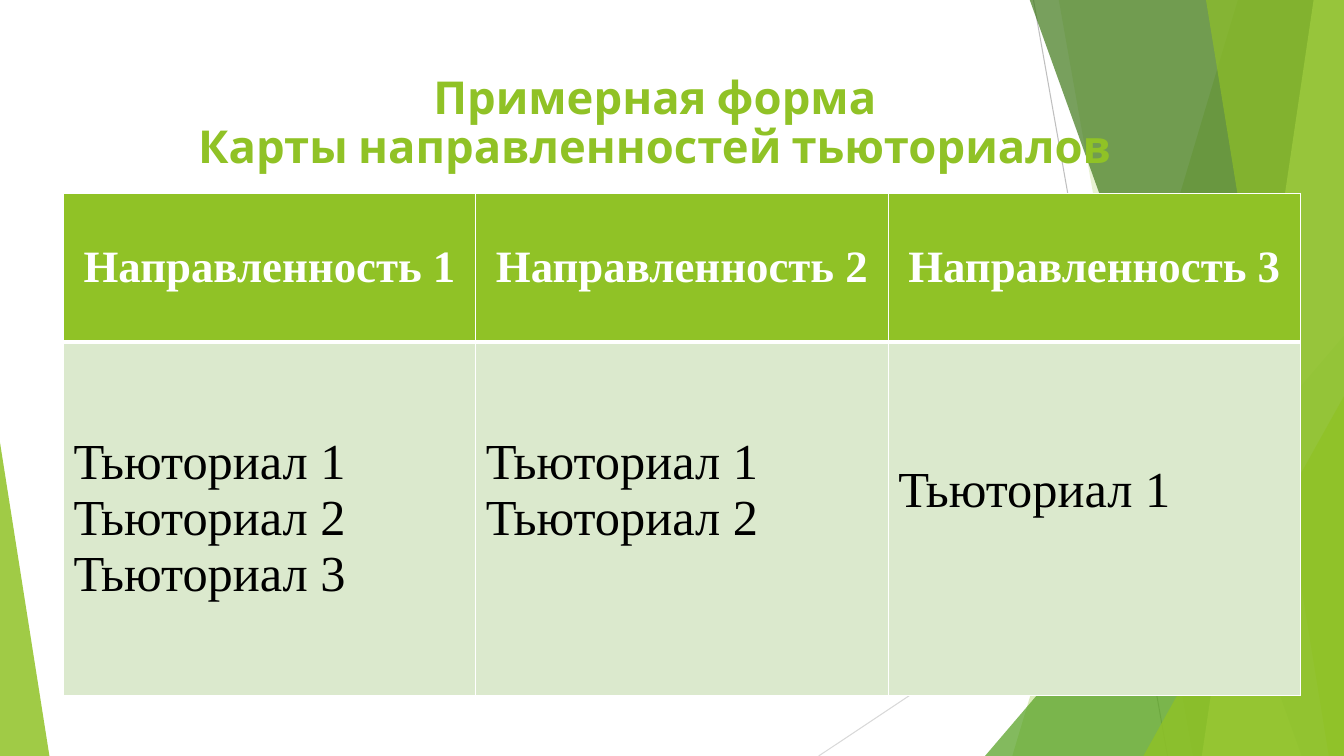
import pptx
import pptx.dml.color
import pptx.enum.shapes
import pptx.enum.text
import pptx.oxml
import pptx.oxml.ns
import pptx.util
from pptx.util import Inches, Pt

RGBColor = pptx.dml.color.RGBColor
GREEN = RGBColor(0x90, 0xC2, 0x26)
MID_GREEN = RGBColor(0x54, 0xA0, 0x21)
DARK_GREEN = RGBColor(0x3F, 0x78, 0x19)
LIME = RGBColor(0xC0, 0xE4, 0x74)
PALE_GREEN = RGBColor(0xDB, 0xE9, 0xCD)
GRAY = RGBColor(0xBF, 0xBF, 0xBF)
LIGHT_GRAY = RGBColor(0xD9, 0xD9, 0xD9)
WHITE = RGBColor(0xFF, 0xFF, 0xFF)
BLACK = RGBColor(0, 0, 0)

WIDTH, HEIGHT, BAND_TOP = 13.33, 7.5, -0.01
TITLE = "Примерная форма\vКарты направленностей тьюториалов"
TABLE_FONT = "Times New Roman"
COLUMNS = [
    ("Направленность 1", ["Тьюториал 1", "Тьюториал 2", "Тьюториал 3"], 0.05),
    ("Направленность 2", ["Тьюториал 1", "Тьюториал 2"], 0.61),
    ("Направленность 3", ["Тьюториал 1"], 0.61),
]
COLUMN_WIDTH = 4.09
ROW_HEIGHTS = [1.47, 3.51]

LINES = [
    ((10.25, 0), (11.58, HEIGHT), GRAY),
    ((WIDTH, 4.03), (8.12, HEIGHT), LIGHT_GRAY),
]
DECORATIONS = [
    ("band", 12.28, 10.04, GREEN, 30),
    ("band", 10.5, 11.83, GREEN, 20),
    ("triangle", (9.77, 3.33, 3.56), 1, MID_GREEN, 72),
    ("band", 10.21, 12.91, DARK_GREEN, 70),
    ("band", 13.03, 11.92, LIME, 70),
    ("band", 11.96, 13.18, GREEN, 65),
    ("triangle", (11.34, 3.93, 1.99), 1, GREEN, 80),
    ("triangle", (0, 4.39, 0.49), 0, GREEN, 85),
]


def paint(shape, color, opacity):
    shape.shadow.inherit = False
    shape.line.fill.background()
    shape.fill.solid()
    shape.fill.fore_color.rgb = color
    color_element = shape.fill._xPr.find(".//" + pptx.oxml.ns.qn("a:srgbClr"))
    alpha = color_element.makeelement(pptx.oxml.ns.qn("a:alpha"), {"val": str(opacity * 1000)})
    color_element.append(alpha)


def add_band(shapes, top_x, bottom_x):
    builder = shapes.build_freeform(Inches(top_x), Inches(BAND_TOP))
    corners = [(WIDTH, BAND_TOP), (WIDTH, HEIGHT), (bottom_x, HEIGHT)]
    builder.add_line_segments([(Inches(x), Inches(y)) for x, y in corners], close=True)
    return builder.convert_to_shape()


def add_triangle(shapes, place, apex):
    left, top, width = place
    triangle = shapes.add_shape(
        pptx.enum.shapes.MSO_SHAPE.ISOSCELES_TRIANGLE,
        Inches(left), Inches(top), Inches(width), Inches(HEIGHT - top))
    triangle.adjustments[0] = apex
    return triangle


def add_background(shapes):
    for start, end, color in LINES:
        connector = shapes.add_connector(
            pptx.enum.shapes.MSO_CONNECTOR.STRAIGHT,
            *[Inches(value) for value in start + end])
        connector.line.color.rgb = color
        connector.line.width = Pt(0.75)
        properties = connector._element.spPr
        properties.append(properties.makeelement(pptx.oxml.ns.qn("a:effectLst"), {}))
    for kind, place, detail, color, opacity in DECORATIONS:
        add = add_band if kind == "band" else add_triangle
        paint(add(shapes, place, detail), color, opacity)


def format_font(paragraph, name, size, color, bold):
    for run in paragraph.runs:
        run.font.name = name
        run.font.size = Pt(size)
        run.font.color.rgb = color
        run.font.bold = bold


def add_title(shapes):
    box = shapes.add_textbox(Inches(0.74), Inches(0.67), Inches(11.51), Inches(1.44))
    frame = box.text_frame
    frame.word_wrap = True
    frame.margin_top = Inches(0.08)
    frame.text = TITLE
    paragraph = frame.paragraphs[0]
    paragraph.alignment = pptx.enum.text.PP_ALIGN.CENTER
    paragraph.line_spacing = 0.9
    format_font(paragraph, "Cabin", 32.4, GREEN, True)


def set_borders(cell, widths):
    properties = cell._tc.get_or_add_tcPr()
    for index, (side, width) in enumerate(widths.items()):
        properties.insert(index, pptx.oxml.parse_xml(
            f'<a:ln{side} {pptx.oxml.ns.nsdecls("a")} w="{Pt(width)}"><a:solidFill>'
            f'<a:srgbClr val="{WHITE}"/></a:solidFill></a:ln{side}>'))


def fill_cell(cell, lines, color, borders):
    cell.vertical_anchor = pptx.enum.text.MSO_ANCHOR.MIDDLE
    cell.fill.solid()
    cell.fill.fore_color.rgb = color
    cell.text_frame.text = "\n".join(lines)
    set_borders(cell, borders)
    return cell.text_frame.paragraphs


def add_tutorial_table(shapes):
    table = shapes.add_table(
        len(ROW_HEIGHTS), len(COLUMNS), Inches(0.63), Inches(1.92),
        Inches(COLUMN_WIDTH * len(COLUMNS)), Inches(sum(ROW_HEIGHTS))).table
    for row, height in zip(table.rows, ROW_HEIGHTS):
        row.height = Inches(height)
    for index, (heading, tutorials, bottom_margin) in enumerate(COLUMNS):
        table.columns[index].width = Inches(COLUMN_WIDTH)
        header, body = table.cell(0, index), table.cell(1, index)
        for paragraph in fill_cell(header, [heading], GREEN, {"L": 1, "R": 1, "T": 1, "B": 3}):
            paragraph.alignment = pptx.enum.text.PP_ALIGN.CENTER
            format_font(paragraph, TABLE_FONT, 32, WHITE, True)
        body.margin_bottom = Inches(bottom_margin)
        for paragraph in fill_cell(body, tutorials, PALE_GREEN, {"L": 1, "R": 1, "T": 3, "B": 1}):
            paragraph.line_spacing = Pt(40)
            format_font(paragraph, TABLE_FONT, 36, BLACK, False)


def main():
    presentation = pptx.Presentation()
    presentation.slide_width = Inches(WIDTH)
    presentation.slide_height = Inches(HEIGHT)
    slide = presentation.slides.add_slide(presentation.slide_layouts[6])
    add_background(slide.shapes)
    add_title(slide.shapes)
    add_tutorial_table(slide.shapes)
    presentation.save("out.pptx")


if __name__ == "__main__":
    main()
